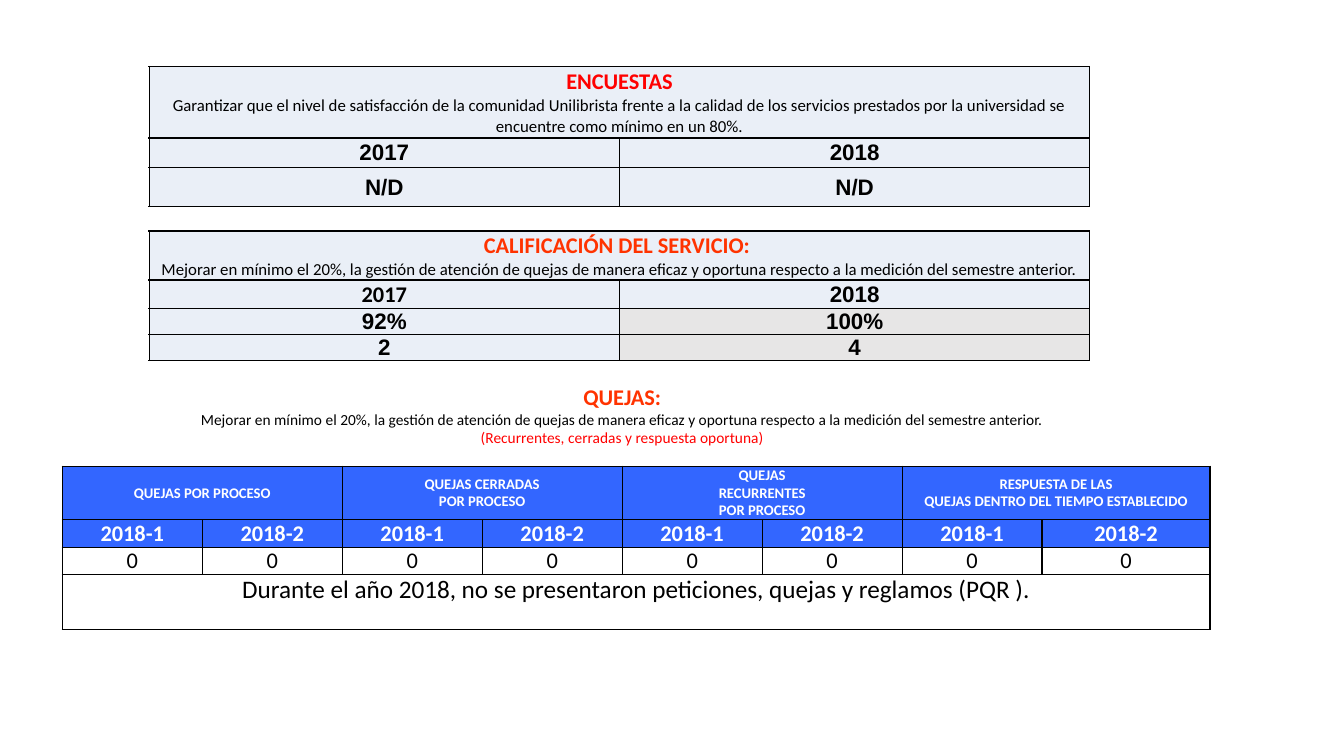
import pptx
import pptx.util
import pptx.dml.color
import pptx.enum.text
import pptx.oxml
import pptx.oxml.ns

Pt = pptx.util.Pt
ALIGN = pptx.enum.text.PP_ALIGN
ANCHOR = pptx.enum.text.MSO_ANCHOR

COLORS = {
    "black": "000000", "white": "FFFFFF", "red": "FF0000", "orange": "FF3300",
    "pale": "EAEFF7", "gray": "E7E6E6", "blue": "3366FF",
}

# style: font, size, bold, colour
STYLES = {
    "survey heading": ("Calibri", 16, True, "red"),
    "heading": ("Calibri", 16, True, "orange"),
    "goal": ("Calibri", 12, False, "black"),
    "complaint goal": ("Calibri", 11, False, "black"),
    "complaint note": ("Calibri", 11, False, "red"),
    "figure": ("Arial", 16, True, "black"),
    "year": ("Calibri", 16, True, "black"),
    "process": ("Calibri", 10.5, True, "white"),
    "semester": ("Calibri", 16, True, "white"),
    "count": ("Calibri", 16, False, "black"),
    "conclusion": ("Calibri", 18, False, "black"),
}

IMPROVEMENT_GOAL = ("Mejorar en mínimo el 20%, la gestión de atención de quejas de manera "
                    "eficaz y oportuna respecto a la medición del semestre anterior.")


def rgb(name):
    return pptx.dml.color.RGBColor.from_string(COLORS[name])


def write_lines(frame, lines):
    """Write (text, style) pairs as centred paragraphs."""
    for index, (text, style) in enumerate(lines):
        paragraph = frame.paragraphs[0] if index == 0 else frame.add_paragraph()
        paragraph.alignment = ALIGN.CENTER
        run = paragraph.add_run()
        run.text = text
        family, size, bold, color = STYLES[style]
        for attribute, value in {"name": family, "size": Pt(size), "bold": bold}.items():
            setattr(run.font, attribute, value)
        run.font.color.rgb = rgb(color)


def set_margins(target, left, top, right, bottom):
    margins = {"margin_left": left, "margin_top": top,
               "margin_right": right, "margin_bottom": bottom}
    for attribute, value in margins.items():
        setattr(target, attribute, Pt(value))


def add_borders(cell):
    properties = cell._tc.get_or_add_tcPr()
    for position, side in enumerate(("lnL", "lnR", "lnT", "lnB")):
        border = pptx.oxml.parse_xml(
            f'<a:{side} {pptx.oxml.ns.nsdecls("a")} w="12700"><a:solidFill>'
            f'<a:srgbClr val="{COLORS["black"]}"/></a:solidFill></a:{side}>')
        properties.insert(position, border)


def add_grid(slide, left, top, widths, heights, rows, margin):
    """Add a table; each row lists (lines, fill) cells that share its width evenly."""
    frame = slide.shapes.add_table(len(heights), len(widths), Pt(left), Pt(top),
                                   Pt(sum(widths)), Pt(sum(heights)))
    grid = frame.table
    grid.first_row = grid.horz_banding = False
    for column, width in zip(grid.columns, widths):
        column.width = Pt(width)
    for row, height in zip(grid.rows, heights):
        row.height = Pt(height)
    for row_index, entries in enumerate(rows):
        span = len(widths) // len(entries)
        for entry_index, (lines, fill) in enumerate(entries):
            first = entry_index * span
            cell = grid.cell(row_index, first)
            if span > 1:
                cell.merge(grid.cell(row_index, first + span - 1))
            cell.vertical_anchor = ANCHOR.MIDDLE
            set_margins(cell, margin, margin, margin, 0)
            write_lines(cell.text_frame, lines)
            for offset in range(span):
                part = grid.cell(row_index, first + offset)
                if fill:
                    part.fill.solid()
                    part.fill.fore_color.rgb = rgb(fill)
                else:
                    part.fill.background()
                add_borders(part)
    return grid


def line_row(texts, style, fill):
    return [([(text, style)], fill) for text in texts]


def add_surveys(slide, left, top, width):
    goal = ("Garantizar que el nivel de satisfacción de la comunidad Unilibrista frente a la "
            "calidad de los servicios prestados por la universidad se encuentre como mínimo "
            "en un 80%.")
    rows = [
        [([("ENCUESTAS", "survey heading"), (goal, "goal")], "pale")],
        line_row(["2017", "2018"], "figure", "pale"),
        line_row(["N/D", "N/D"], "figure", "pale"),
    ]
    add_grid(slide, left, top, [width / 2] * 2, [51, 21, 28], rows, 0.72)


def add_service_rating(slide, left, top, width):
    rows = [
        [([("CALIFICACIÓN DEL SERVICIO: ", "heading"), (IMPROVEMENT_GOAL, "goal")], "pale")],
        [([("2017", "year")], "pale"), ([("2018", "figure")], "pale")],
    ]
    for before, after in (("92%", "100%"), ("2", "4")):
        rows.append([([(before, "figure")], "pale"), ([(after, "figure")], "gray")])
    add_grid(slide, left, top, [width / 2] * 2, [35, 20.5, 18.5, 18.5], rows, 0.72)


def add_complaints_title(slide, left, top, width, height):
    title = slide.shapes.title
    for attribute, value in {"left": left, "top": top, "width": width, "height": height}.items():
        setattr(title, attribute, Pt(value))
    frame = title.text_frame
    frame.word_wrap = True
    frame.auto_size = pptx.enum.text.MSO_AUTO_SIZE.NONE
    frame.vertical_anchor = ANCHOR.MIDDLE
    set_margins(frame, 7.2, 0, 7.2, 17)
    write_lines(frame, [
        ("QUEJAS:", "heading"),
        (IMPROVEMENT_GOAL, "complaint goal"),
        ("(Recurrentes, cerradas y respuesta oportuna)", "complaint note"),
    ])


def add_complaints(slide, left, top, width):
    processes = [
        ["QUEJAS POR PROCESO"],
        ["QUEJAS CERRADAS", "POR PROCESO"],
        ["QUEJAS", "RECURRENTES", "POR PROCESO"],
        ["RESPUESTA DE LAS", "QUEJAS DENTRO DEL TIEMPO ESTABLECIDO"],
    ]
    conclusion = "Durante el año 2018, no se presentaron peticiones, quejas y reglamos (PQR )."
    rows = [
        [([(line, "process") for line in lines], "blue") for lines in processes],
        line_row(["2018-1", "2018-2"] * len(processes), "semester", "blue"),
        line_row(["0"] * 8, "count", None),
        line_row([conclusion], "conclusion", None),
    ]
    narrow = 100
    widths = [narrow] * 7 + [width - 7 * narrow]
    grid = add_grid(slide, left, top, widths, [38, 19.5, 19.5, 39], rows, 0)
    grid.cell(3, 0).vertical_anchor = ANCHOR.TOP


def main():
    deck = pptx.Presentation()
    deck.slide_width, deck.slide_height = Pt(960), Pt(540)
    slide = deck.slides.add_slide(deck.slide_layouts[5])
    add_surveys(slide, 106.5, 47.5, 672)
    add_service_rating(slide, 106.5, 165, 672)
    add_complaints_title(slide, 44.5, 276.5, 800, 57)
    add_complaints(slide, 44.5, 333, 820)
    deck.save("out.pptx")


if __name__ == "__main__":
    main()
